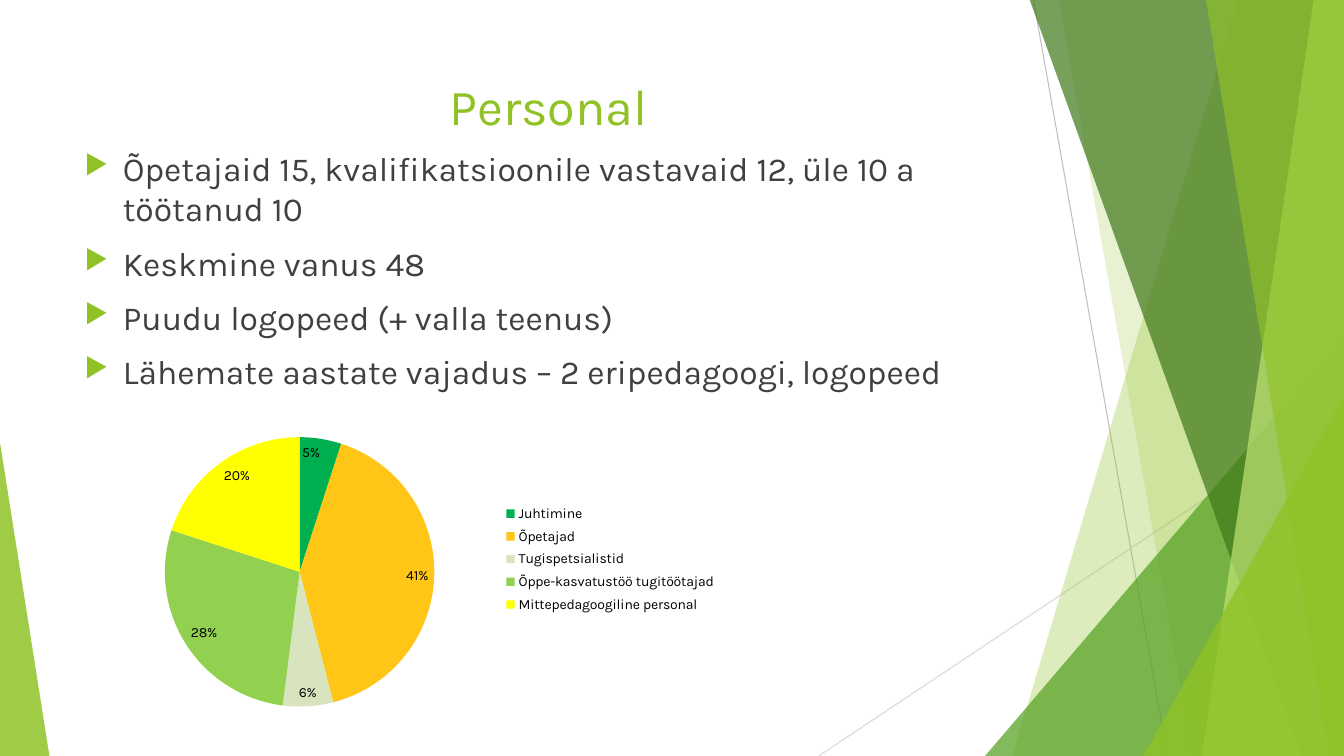
from dataclasses import dataclass

from lxml.etree import SubElement
from pptx import Presentation
from pptx.chart.data import CategoryChartData
from pptx.dml.color import RGBColor
from pptx.enum.chart import XL_CHART_TYPE, XL_LABEL_POSITION, XL_LEGEND_POSITION
from pptx.enum.shapes import MSO_CONNECTOR, MSO_SHAPE
from pptx.enum.text import MSO_ANCHOR, PP_ALIGN
from pptx.oxml.ns import qn
from pptx.util import Inches, Pt


@dataclass(frozen=True)
class Theme:
    font: str = "Karla"
    title_size: int = 36
    body_size: int = 24
    chart_size: int = 10
    green: str = "90C226"
    mid_green: str = "54A021"
    dark_green: str = "3F7819"
    light_green: str = "C0E474"
    body_text: str = "404040"
    chart_text: str = "000000"
    line_dark: str = "BFBFBF"
    line_light: str = "D9D9D9"


@dataclass(frozen=True)
class Box:
    left: float
    top: float
    width: float
    height: float

    @property
    def right(self):
        return self.left + self.width

    @property
    def bottom(self):
        return self.top + self.height

    def lengths(self):
        return [Inches(value) for value in (self.left, self.top, self.width, self.height)]


THEME = Theme()

BULLETS = [
    "Õpetajaid 15, kvalifikatsioonile vastavaid 12, üle 10 a töötanud 10",
    "Keskmine vanus 48",
    "Puudu logopeed (+ valla teenus)",
    "Lähemate aastate vajadus – 2 eripedagoogi, logopeed",
]

# Category, value, colour, opacity in percent
STAFF = [
    ("Juhtimine", 5, "00B050", 100),
    ("Õpetajad", 41, "FFC000", 91),
    ("Tugispetsialistid", 6, "D7E4BD", 100),
    ("Õppe-kasvatustöö tugitöötajad", 28, "92D050", 100),
    ("Mittepedagoogiline personal", 20, "FFFF00", 100),
]


def apply_format(target, values):
    for name, value in values.items():
        setattr(target, name, value)


def font_format(size, color):
    return {"name": THEME.font, "size": Pt(size)}, RGBColor.from_string(color)


def style_font(font, size, color):
    values, rgb = font_format(size, color)
    apply_format(font, values)
    font.color.rgb = rgb


def fill_solid(fill, color, opacity=100):
    fill.solid()
    fill.fore_color.rgb = RGBColor.from_string(color)
    if opacity < 100:
        color_element = fill._xPr.find(qn("a:solidFill"))[0]
        SubElement(color_element, qn("a:alpha"), val=str(opacity * 1000))


def style_panel(shape, color, opacity):
    shape.shadow.inherit = False
    shape.line.fill.background()
    fill_solid(shape.fill, color, opacity)


# Backdrop
def add_line(slide, start, end, color):
    points = [Inches(value) for value in (*start, *end)]
    connector = slide.shapes.add_connector(MSO_CONNECTOR.STRAIGHT, *points)
    connector.line.width = Pt(0.75)
    connector.line.color.rgb = RGBColor.from_string(color)
    SubElement(connector._element.spPr, qn("a:effectLst"))


def add_ribbon(slide, box, top_left, bottom_left, color, opacity):
    """A band from a slanted left edge to the right edge of the box."""
    top = box.top - 0.01
    corners = [(top_left, top), (box.right, top), (box.right, box.bottom),
               (bottom_left, box.bottom)]
    points = [(Inches(x), Inches(y)) for x, y in corners]
    builder = slide.shapes.build_freeform(*points[0])
    builder.add_line_segments(points[1:], close=True)
    style_panel(builder.convert_to_shape(), color, opacity)


def add_corner(slide, box, width, height, color, opacity, on_right=True):
    """A right triangle standing in a bottom corner of the box."""
    left = box.right - width if on_right else box.left
    place = Box(left, box.bottom - height, width, height)
    shape = slide.shapes.add_shape(MSO_SHAPE.ISOSCELES_TRIANGLE, *place.lengths())
    shape.adjustments[0] = 1 if on_right else 0
    style_panel(shape, color, opacity)


def add_backdrop(slide, box):
    add_line(slide, (box.left + 10.25, box.top), (box.left + 11.58, box.bottom), THEME.line_dark)
    add_line(slide, (box.right, box.top + 4.03), (box.left + 8.12, box.bottom), THEME.line_light)
    add_ribbon(slide, box, 12.28, 10.04, THEME.green, 30)
    add_ribbon(slide, box, 10.5, 11.83, THEME.green, 20)
    add_corner(slide, box, 3.56, 4.17, THEME.mid_green, 72)
    add_ribbon(slide, box, 10.21, 12.91, THEME.dark_green, 70)
    add_ribbon(slide, box, 13.03, 11.92, THEME.light_green, 70)
    add_ribbon(slide, box, 11.96, 13.18, THEME.green, 65)
    add_corner(slide, box, 1.99, 3.57, THEME.green, 80)
    add_corner(slide, box, 0.49, 3.11, THEME.green, 85, on_right=False)


# Text
def add_text_frame(slide, box, anchor):
    frame = slide.shapes.add_textbox(*box.lengths()).text_frame
    apply_format(frame, {"word_wrap": True, "vertical_anchor": anchor})
    return frame


def add_title(slide, box, text):
    paragraph = add_text_frame(slide, box, MSO_ANCHOR.MIDDLE).paragraphs[0]
    apply_format(paragraph, {"text": text, "alignment": PP_ALIGN.CENTER})
    style_font(paragraph.runs[0].font, THEME.title_size, THEME.green)


def add_bullet(paragraph):
    properties = paragraph._p.get_or_add_pPr()
    indent = Inches(0.38)
    properties.set("marL", str(indent))
    properties.set("indent", str(-indent))
    color = SubElement(properties, qn("a:buClr"))
    SubElement(color, qn("a:srgbClr"), val=THEME.green)
    SubElement(properties, qn("a:buSzPct"), val="80000")
    SubElement(properties, qn("a:buChar"), char="▶")


def add_bullet_list(slide, box, lines):
    frame = add_text_frame(slide, box, MSO_ANCHOR.TOP)
    for index, line in enumerate(lines):
        paragraph = frame.add_paragraph() if index else frame.paragraphs[0]
        apply_format(paragraph, {"text": line, "space_before": Pt(10)})
        style_font(paragraph.runs[0].font, THEME.body_size, THEME.body_text)
        add_bullet(paragraph)


# Chart
def set_layout(parent, position, left, top, width, height, inner=False):
    """Fix a chart part at fractions of the chart's size."""
    for old in parent.findall(qn("c:layout")):
        parent.remove(old)
    layout = parent.makeelement(qn("c:layout"), {})
    parent.insert(position, layout)
    manual = SubElement(layout, qn("c:manualLayout"))
    values = {"xMode": "edge", "yMode": "edge", "x": left, "y": top, "w": width, "h": height}
    if inner:
        values = {"layoutTarget": "inner", **values}
    for name, value in values.items():
        SubElement(manual, qn(f"c:{name}"), val=str(value))


def add_staff_chart(slide, box):
    data = CategoryChartData()
    data.categories = [row[0] for row in STAFF]
    data.add_series("Series 1", [row[1] for row in STAFF])
    chart = slide.shapes.add_chart(XL_CHART_TYPE.PIE, *box.lengths(), data).chart
    apply_format(chart, {"has_title": False, "has_legend": True})
    style_font(chart.font, THEME.chart_size, THEME.chart_text)
    apply_format(chart.legend, {"position": XL_LEGEND_POSITION.RIGHT, "include_in_layout": False})
    set_layout(chart.legend._element, 1, 0.67, 0.33, 0.32, 0.35)
    set_layout(chart._chartSpace.chart.plotArea, 0, 0.139, 0.151, 0.415, 0.782, inner=True)

    plot = chart.plots[0]
    apply_format(plot, {"vary_by_categories": True, "has_data_labels": True})
    apply_format(plot.data_labels, {
        "show_percentage": True, "show_value": False, "number_format": "0%",
        "number_format_is_linked": False, "position": XL_LABEL_POSITION.INSIDE_END})
    style_font(plot.data_labels.font, THEME.chart_size, THEME.chart_text)
    for index, (_, _, color, opacity) in enumerate(STAFF):
        fill_solid(plot.series[0].points[index].format.fill, color, opacity)


def main():
    presentation = Presentation()
    page = Box(0, 0, 13.33, 7.5)
    apply_format(presentation, {"slide_width": Inches(page.width),
                                "slide_height": Inches(page.height)})
    slide = presentation.slides.add_slide(presentation.slide_layouts[6])
    add_backdrop(slide, page)
    add_title(slide, Box(0.74, 0.67, 9.4, 0.76), "Personal")
    add_bullet_list(slide, Box(0.74, 1.42, 9.4, 5.66), BULLETS)
    add_staff_chart(slide, Box(0.74, 3.82, 6.44, 3.42))
    presentation.save("out.pptx")


if __name__ == "__main__":
    main()
